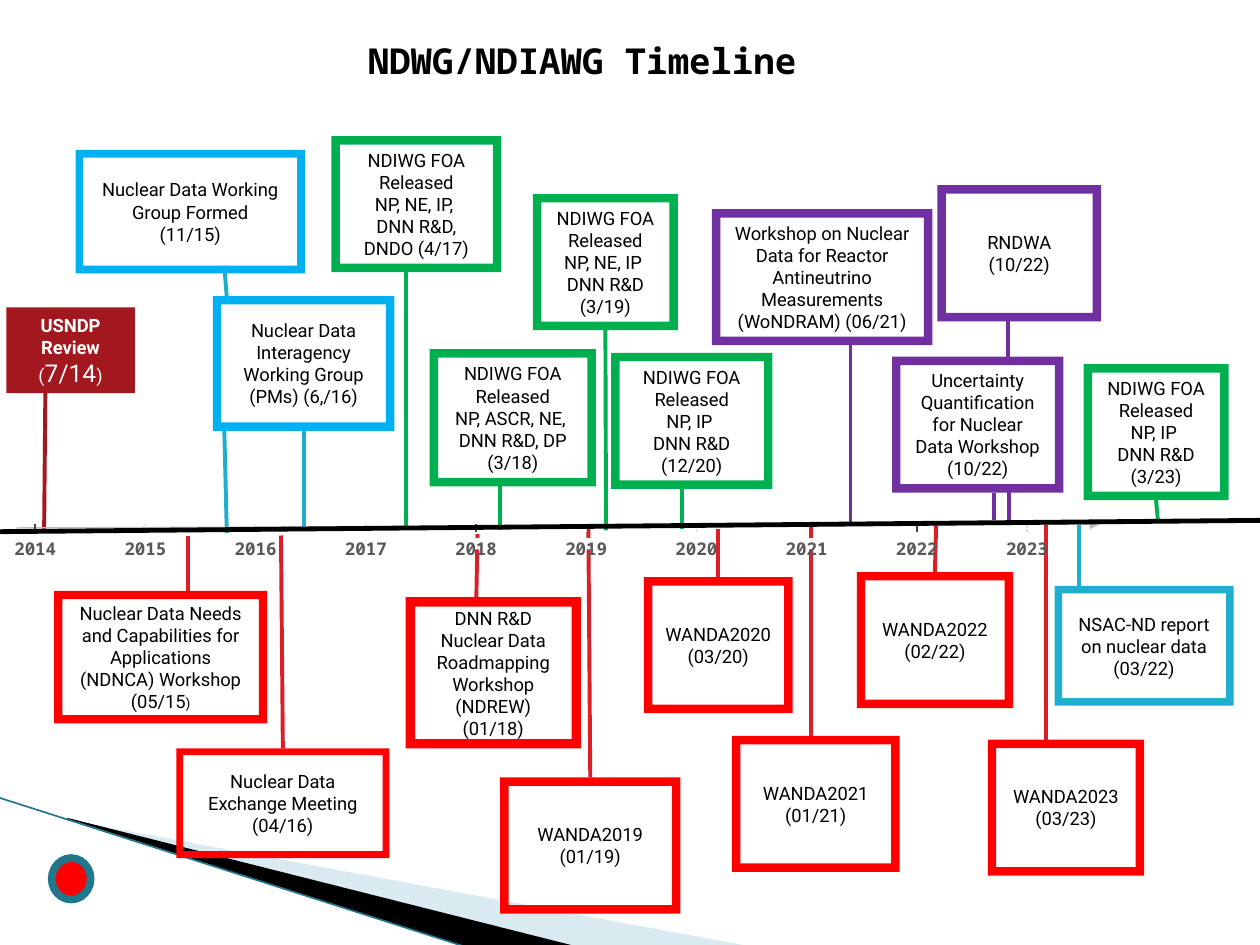
from pptx import Presentation
from pptx.dml.color import RGBColor
from pptx.enum.dml import MSO_LINE
from pptx.enum.shapes import MSO_CONNECTOR, MSO_SHAPE
from pptx.enum.text import MSO_ANCHOR, PP_ALIGN
from pptx.oxml.ns import qn
from pptx.util import Inches, Pt
from lxml.etree import SubElement

RED, GREEN, SKY, PURPLE = "FF0000", "00B050", "00B0F0", "7030A0"
STEM, TEAL, MAROON = "DA1F28", "1FAECD", "A3171E"
FOA = "NDIWG FOA Released"

# Event frames: colour, left, top, width, height, paragraphs,
# stem colour, stem (x, y) on the axis, stem (x, y) at the frame
EVENTS = [
    (SKY, 0.6, 1.19, 1.82, 0.98, ["Nuclear Data Working Group Formed", "(11/15)"],
     TEAL, (1.8, 2.36), (1.78, 2.11)),
    (SKY, 1.69, 2.35, 1.44, 1.07, ["Nuclear Data Interagency Working Group (PMs) (6,/16)"],
     TEAL, (2.41, 4.2), (2.41, 3.42)),
    (GREEN, 2.63, 1.08, 1.35, 1.08, [FOA, "NP, NE, IP, \nDNN R&D, DNDO (4/17)"],
     GREEN, (3.22, 4.2), (3.22, 2.11)),
    (GREEN, 3.41, 2.77, 1.32, 1.09, [FOA, "NP, ASCR, NE, \nDNN R&D, DP (3/18)"],
     GREEN, (3.97, 4.21), (3.97, 3.86)),
    (GREEN, 4.23, 1.54, 1.15, 1.08, [FOA, "NP, NE, IP \nDNN R&D (3/19)"],
     GREEN, (4.81, 4.21), (4.81, 2.59)),
    (GREEN, 4.85, 2.8, 1.28, 1.08, [FOA, "NP, IP \nDNN R&D (12/20)"],
     GREEN, (5.41, 4.2), (5.41, 3.85)),
    (GREEN, 8.6, 2.89, 1.15, 1.08, [FOA, "NP, IP \nDNN R&D (3/23)"],
     GREEN, (9.19, 4.13), (9.19, 3.92)),
    (PURPLE, 5.65, 1.66, 1.75, 1.08,
     ["Workshop on Nuclear Data for Reactor Antineutrino Measurements (WoNDRAM) (06/21)"],
     PURPLE, (6.75, 4.17), (6.75, 2.74)),
    (PURPLE, 7.44, 1.47, 1.3, 1.08, ["RNDWA", "(10/22)"],
     PURPLE, (8, 2.87), (8, 2.55)),
    (PURPLE, 7.08, 2.83, 1.36, 1.08,
     ["Uncertainty Quantification for Nuclear Data Workshop", "(10/22)"],
     PURPLE, (7.89, 4.13), (7.89, 3.91)),
    (RED, 0.43, 4.69, 1.69, 1.05,
     [[("Nuclear Data Needs and Capabilities for Applications (NDNCA) Workshop (05/15", {}),
       (")", {"size": 7.9})]],
     STEM, (1.49, 4.25), (1.49, 4.69)),
    (RED, 1.4, 5.94, 1.69, 0.87, ["Nuclear Data Exchange Meeting (04/16)"],
     STEM, (2.23, 4.25), (2.23, 5.93)),
    (RED, 3.22, 4.74, 1.39, 1.2,
     ["DNN R&D Nuclear Data Roadmapping Workshop (NDREW) (01/18)"],
     STEM, (3.79, 4.24), (3.78, 4.77)),
    (RED, 3.97, 6.17, 1.43, 1.08, ["WANDA2019 (01/19)"],
     STEM, (4.67, 4.2), (4.69, 6.17)),
    (RED, 5.11, 4.58, 1.18, 1.08, ["WANDA2020 (03/20)"],
     STEM, (5.7, 4.2), (5.7, 4.58)),
    (RED, 5.81, 5.84, 1.33, 1.08, ["WANDA2021 (01/21)"],
     STEM, (6.44, 4.18), (6.44, 5.85)),
    (RED, 6.8, 4.54, 1.24, 1.08, ["WANDA2022 (02/22)"],
     STEM, (7.43, 4.17), (7.42, 4.54)),
    (RED, 7.84, 5.87, 1.24, 1.08, ["WANDA2023 (03/23)"],
     STEM, (8.3, 4.16), (8.3, 5.87)),
    (TEAL, 8.37, 4.65, 1.42, 0.95, ["NSAC-ND report on nuclear data (03/22)"],
     TEAL, (8.56, 4.17), (8.56, 4.69)),
]


def color(code):
    return RGBColor.from_string(code)


def write(shape, paras, size=10.5, font="Roboto", ink="000000", bold=False,
          align=PP_ALIGN.CENTER, anchor=MSO_ANCHOR.TOP, pad=None, space=None):
    """Each paragraph is a string or a list of (text, changes) runs."""
    frame = shape.text_frame
    frame.word_wrap = True
    frame.vertical_anchor = anchor
    if pad is not None:
        frame.margin_left = frame.margin_right = Inches(pad[0])
        frame.margin_top = frame.margin_bottom = Inches(pad[1])
    for i, runs in enumerate(paras):
        para = frame.add_paragraph() if i else frame.paragraphs[0]
        para.alignment = align
        if space:
            para.line_spacing = space
        for words, change in [(runs, {})] if isinstance(runs, str) else runs:
            for n, part in enumerate(words.split("\n")):
                if n:
                    para.add_line_break()
                run = para.add_run()
                run.text = part
                run.font.name = font
                run.font.size = Pt(change.get("size", size))
                run.font.bold = change.get("bold", bold)
                run.font.color.rgb = color(ink)


def add_box(slide, kind, left, top, width, height, fill):
    box = slide.shapes.add_shape(kind, Inches(left), Inches(top),
                                 Inches(width), Inches(height))
    box.shadow.inherit = False
    box.fill.solid()
    box.fill.fore_color.rgb = color(fill)
    box.line.fill.background()
    return box


def add_line(slide, start, end, ink, width=2.25, dash=None, arrow=False):
    line = slide.shapes.add_connector(MSO_CONNECTOR.STRAIGHT,
                                      *map(Inches, (*start, *end)))
    line.line.color.rgb = color(ink)
    line.line.width = Pt(width)
    if dash:
        line.line.dash_style = dash
    if arrow:
        SubElement(line.line._get_or_add_ln(), qn("a:tailEnd"), type="triangle")
    SubElement(line._element.spPr, qn("a:effectLst"))
    return line


def add_wedge(slide, points, fill, alpha=None):
    spots = [(Inches(x), Inches(y)) for x, y in points]
    form = slide.shapes.build_freeform(*spots[0])
    form.add_line_segments(spots[1:])
    wedge = form.convert_to_shape()
    wedge.shadow.inherit = False
    wedge.fill.solid()
    wedge.fill.fore_color.rgb = color(fill)
    wedge.line.fill.background()
    if alpha:
        tint = wedge._element.spPr.find(".//" + qn("a:srgbClr"))
        SubElement(tint, qn("a:alpha"), val=str(alpha * 1000))


def add_event(slide, ring, left, top, width, height, paras, ink, start, end):
    line = add_line(slide, start, end, ink)
    box = add_box(slide, MSO_SHAPE.FRAME, left, top, width, height, ring)
    box.adjustments[0] = 0.062
    write(box, paras, anchor=MSO_ANCHOR.MIDDLE)
    # Join the stem where it meets the middle of the frame's side
    if abs(left + width / 2 - end[0]) < 0.05 and width != 1.33:
        line.end_connect(box, 2 if end[1] < start[1] else 0)


def add_axis(slide):
    add_line(slide, (0.13, 4.19), (8.73, 4.16), "BFBFBF", 0.75, arrow=True)
    for i in range(10):
        x = 0.28 + 0.8745 * i
        major = i % 4 == 0
        ink, size, dash = (("404040", 1.25, None) if major
                           else ("D9D9D9", 0.75, MSO_LINE.SQUARE_DOT))
        add_line(slide, (x, 4.16), (x, 4.22), ink, size, dash)
        wide = 0.77 if major else 0.55
        spot = x - wide / 2, 4.27, wide, 0.09
        if i in (4, 5, 7):  # white ground over a stem
            label = add_box(slide, MSO_SHAPE.RECTANGLE, *spot, "FFFFFF")
        else:
            label = slide.shapes.add_textbox(*map(Inches, spot))
        write(label, [str(2014 + i)], size=10, font="Noto Sans Mono",
              ink="595959", bold=True, pad=(0, 0))
    add_line(slide, (0, 4.22), (10, 4.13), "000000", 2.75)


def main():
    deck = Presentation()
    deck.slide_width, deck.slide_height = Inches(10), Inches(7.5)
    slide = deck.slides.add_slide(deck.slide_layouts[6])

    # Corner decoration
    add_wedge(slide, [(0.55, 6.51), (5.95, 7.51), (4.56, 7.51), (0.55, 6.5)],
              "A0CBDC", 40)
    add_wedge(slide, [(0.53, 6.49), (4.57, 7.51), (3.72, 7.52), (0.54, 6.5)],
              "000000")
    add_line(slide, (-0.01, 6.33), (3.71, 7.52), "21788D", 0.95)
    dot = add_box(slide, MSO_SHAPE.OVAL, 0.41, 6.81, 0.31, 0.33, RED)
    dot.line.color.rgb = color("21788D")
    dot.line.width = Pt(4.33)

    # Title
    title = slide.shapes.add_textbox(*map(Inches, (2.85, 0.35, 3.84, 0.53)))
    write(title, ["NDWG/NDIAWG Timeline"], size=20.4, font="Noto Sans Mono",
          bold=True, align=PP_ALIGN.LEFT, pad=(0.07, 0.04), space=0.75)

    # Review that opens the timeline
    add_line(slide, (0.35, 4.23), (0.36, 3.12), MAROON)
    review = add_box(slide, MSO_SHAPE.RECTANGLE, 0.05, 2.44, 1.02, 0.68, MAROON)
    write(review, [[("USNDP Review ", {"bold": True}), ("(", {}),
                    ("7/14", {"size": 14}), (")", {})]], ink="FFFFFF")

    # Events, and the stems that run on behind a nearer frame
    add_line(slide, (1.8, 4.23), (1.78, 3.4), TEAL)
    add_line(slide, (8.01, 4.17), (8.01, 3.85), PURPLE)
    for event in EVENTS:
        add_event(slide, *event)

    add_axis(slide)
    deck.save("out.pptx")


if __name__ == "__main__":
    main()
